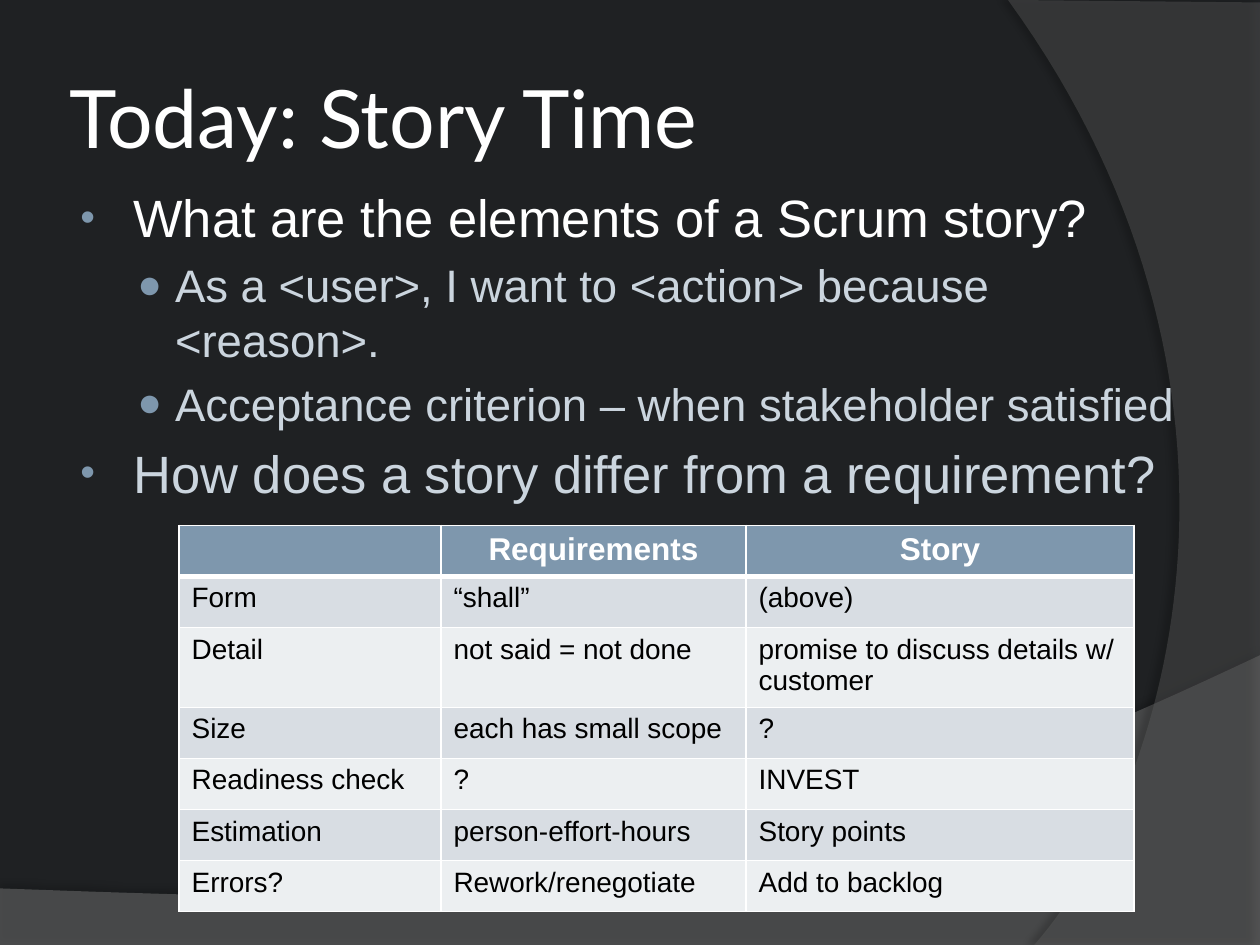
import pptx
import pptx.dml.color
import pptx.enum.text
import pptx.oxml
import pptx.oxml.ns
import pptx.util

Cm = pptx.util.Cm
Pt = pptx.util.Pt
RGBColor = pptx.dml.color.RGBColor

DARK = RGBColor(0x1F, 0x21, 0x23)
WAVE_GRAY = RGBColor(0x7F, 0x7F, 0x7F)
ARC_GRAY = RGBColor(0x5E, 0x5E, 0x5E)
WHITE = RGBColor(0xFF, 0xFF, 0xFF)
BLACK = RGBColor(0, 0, 0)
STEEL = RGBColor(0x7E, 0x97, 0xAD)
PALE = RGBColor(0xCB, 0xD5, 0xDE)
BAND_DARK = RGBColor(0xD8, 0xDD, 0xE3)
BAND_LIGHT = RGBColor(0xEC, 0xEF, 0xF1)

LEVELS = [
    {"size": 30, "left": 1.17, "indent": -1.07, "bullet": "•", "bullet_size": 80},
    {"size": 26, "left": 2.01, "indent": -0.76, "bullet": "●", "bullet_size": 90},
]
BODY = [
    (0, "What are the elements of a Scrum story?", WHITE),
    (1, "As a <user>, I want to <action> because <reason>.", PALE),
    (1, "Acceptance criterion – when stakeholder satisfied", PALE),
    (0, "How does a story differ from a requirement?", PALE),
]
COMPARISON = [
    ("", "Requirements", "Story"),
    ("Form", "“shall”", "(above)"),
    ("Detail", "not said = not done", "promise to discuss details w/ customer"),
    ("Size", "each has small scope", "?"),
    ("Readiness check", "?", "INVEST"),
    ("Estimation", "person-effort-hours", "Story points"),
    ("Errors?", "Rework/renegotiate", "Add to backlog"),
]


def set_attributes(target, values):
    for name, value in values.items():
        setattr(target, name, value)


def format_font(font, color, **values):
    set_attributes(font, values)
    font.color.rgb = color


def make_element(tag, attributes, content=""):
    return pptx.oxml.parse_xml(
        f'<a:{tag} {pptx.oxml.ns.nsdecls("a")} {attributes}>{content}</a:{tag}>')


def curve_points(start, first, second, end, steps=60):
    points = []
    for step in range(1, steps + 1):
        t = step / steps
        weights = ((1 - t) ** 3, 3 * t * (1 - t) ** 2, 3 * t ** 2 * (1 - t), t ** 3)
        points.append(tuple(
            sum(weight * value for weight, value in zip(weights, values))
            for values in zip(start, first, second, end)))
    return points


def add_backdrop(slide, box, corners, curve, color, opacity, shadow):
    left, top = box
    outline = corners + curve_points(corners[-1], *curve)
    points = [(Cm(left + x), Cm(top + y)) for x, y in outline]
    builder = slide.shapes.build_freeform(*points[0])
    builder.add_line_segments(points[1:], close=True)
    shape = builder.convert_to_shape()
    shape.fill.solid()
    shape.fill.fore_color.rgb = color
    shape.line.fill.background()
    properties = shape.element.spPr
    color_element = properties.find(".//" + pptx.oxml.ns.qn("a:srgbClr"))
    color_element.append(make_element("alpha", f'val="{opacity * 1000}"'))
    shadow_opacity, distance, direction = shadow
    properties.append(make_element("effectLst", "", (
        f'<a:outerShdw blurRad="{Pt(4)}" dist="{Pt(distance)}" dir="{direction * 60000}" '
        f'algn="ctr" rotWithShape="0"><a:srgbClr val="{BLACK}">'
        f'<a:alpha val="{shadow_opacity * 1000}"/></a:srgbClr></a:outerShdw>')))
    slide.shapes.title.element.addprevious(shape.element)


def place_title(slide, box, text):
    title = slide.shapes.title
    set_attributes(title, dict(zip(("left", "top", "width", "height"), map(Cm, box))))
    frame = title.text_frame
    margin = Cm(0.13)
    set_attributes(frame, {
        "text": text, "word_wrap": True,
        "auto_size": pptx.enum.text.MSO_AUTO_SIZE.NONE,
        "vertical_anchor": pptx.enum.text.MSO_ANCHOR.MIDDLE,
        "margin_left": margin, "margin_right": margin,
        "margin_top": margin, "margin_bottom": margin,
    })
    paragraph = frame.paragraphs[0]
    paragraph.alignment = pptx.enum.text.PP_ALIGN.LEFT
    format_font(paragraph.runs[0].font, WHITE, name="Lato", size=Pt(46))


def add_body(slide, box, lines):
    frame = slide.shapes.add_textbox(*map(Cm, box)).text_frame
    frame.word_wrap = True
    for index, (level, text, color) in enumerate(lines):
        style = LEVELS[level]
        paragraph = frame.add_paragraph() if index else frame.paragraphs[0]
        set_attributes(paragraph, {
            "text": text, "level": level, "space_before": Pt(style["size"] * 0.2)})
        format_font(paragraph.runs[0].font, color, name="Arial", size=Pt(style["size"]))
        properties = paragraph._p.get_or_add_pPr()
        properties.set("marL", str(Cm(style["left"])))
        properties.set("indent", str(Cm(style["indent"])))
        properties.append(make_element("buClr", "", f'<a:srgbClr val="{STEEL}"/>'))
        properties.append(make_element("buSzPct", f'val="{style["bullet_size"] * 1000}"'))
        properties.append(make_element("buFont", 'typeface="Arial"'))
        properties.append(make_element("buChar", f'char="{style["bullet"]}"'))


def set_borders(cell, bottom_width):
    properties = cell._tc.get_or_add_tcPr()
    widths = {"lnL": 1, "lnR": 1, "lnT": 1, "lnB": bottom_width}
    for index, (side, width) in enumerate(widths.items()):
        properties.insert(index, make_element(
            side, f'w="{Pt(width)}"',
            f'<a:solidFill><a:srgbClr val="{WHITE}"/></a:solidFill>'))


def add_comparison(slide, box, column_widths, rows):
    table = slide.shapes.add_table(len(rows), len(rows[0]), *map(Cm, box)).table
    for column, width in zip(table.columns, column_widths):
        column.width = Cm(width)
    for row_index, texts in enumerate(rows):
        is_header = row_index == 0
        band = BAND_DARK if row_index % 2 else BAND_LIGHT
        for column_index, text in enumerate(texts):
            cell = table.cell(row_index, column_index)
            cell.fill.solid()
            cell.fill.fore_color.rgb = STEEL if is_header else band
            set_borders(cell, 3 if is_header else 1)
            cell.text = text
            paragraph = cell.text_frame.paragraphs[0]
            if is_header:
                paragraph.alignment = pptx.enum.text.PP_ALIGN.CENTER
            format_font(paragraph.font, WHITE if is_header else BLACK, name="Arial",
                        size=Pt(18 if is_header else 16), bold=is_header)
            for run in paragraph.runs:
                format_font(run.font, WHITE if is_header else BLACK, name="Arial",
                            size=Pt(18 if is_header else 16), bold=is_header)


def main():
    presentation = pptx.Presentation()
    presentation.slide_width = Cm(25.4)
    presentation.slide_height = Cm(19.05)
    slide = presentation.slides.add_slide(presentation.slide_layouts[5])
    slide.background.fill.solid()
    slide.background.fill.fore_color.rgb = DARK

    add_backdrop(slide, (0, 13.21), [(0, 4.7), (0, 5.87), (25.4, 5.87), (25.4, 0)],
                 [(14.2, 5.31), (9.93, 5.05), (0, 4.7)], WAVE_GRAY, 45, (35, 3.5, 270))
    add_backdrop(slide, (20.32, 0), [(5.08, 0.05), (5.08, 19.05), (0.53, 19.05)],
                 [(3.43, 15.72), (5.54, 7.62), (0, 0)], ARC_GRAY, 40, (45, 4, 180))
    place_title(slide, (1.27, 0.76, 20.75, 3.18), "Today: Story Time")
    add_body(slide, (1.27, 3.61, 23.06, 12.57), BODY)
    add_comparison(slide, (3.61, 10.59, 19.25, 7.21), (5.28, 6.15, 7.82), COMPARISON)
    presentation.save("out.pptx")


if __name__ == "__main__":
    main()
